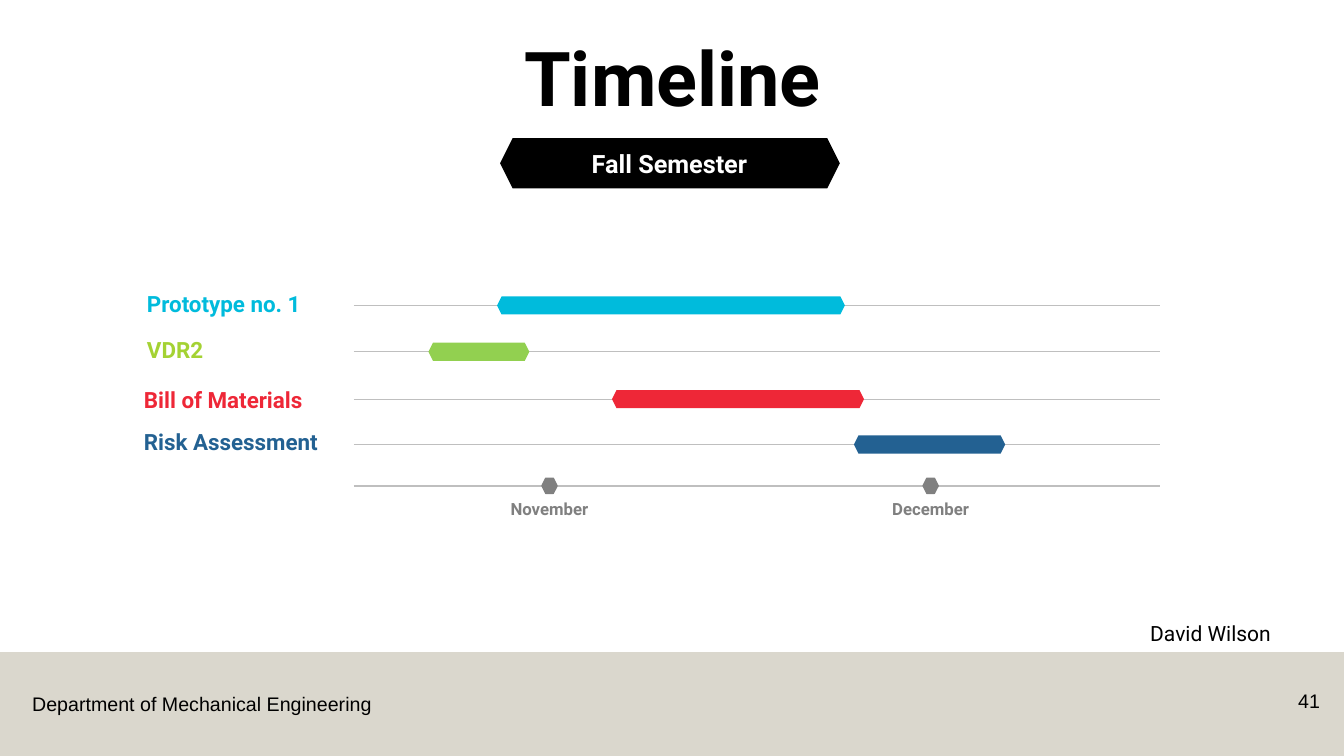
from lxml import etree
from pptx import Presentation
from pptx.dml.color import RGBColor
from pptx.enum import shapes, text
from pptx.oxml.ns import qn
from pptx.util import Inches, Pt

COLORS = {
    "black": "000000", "white": "FFFFFF", "band": "B7B09C",
    "rule": "BFBFBF", "gray": "808080", "cyan": "00BBDC",
    "lime": "A4D233", "green": "92D050", "red": "EE2737", "blue": "236192",
}
TASKS = [
    ("Prototype no. 1", "cyan", "cyan", 1.36, 2.83, 3.03, 4.93, 3.45),
    ("VDR2", "lime", "green", 1.36, 3.29, 3.49, 4.25, 1),
    ("Bill of Materials", "red", "red", 1.33, 3.78, 3.96, 6.07, 2.5),
    ("Risk Assessment", "blue", "blue", 1.33, 4.2, 4.41, 8.47, 1.5),
]
MONTHS = [("November", 5.45), ("December", 9.23)]
AXIS_Y, AXIS_LEFT, AXIS_RIGHT = 4.82, 3.51, 11.51
BAR_H, DOT, MONTH_W = 0.18, 0.15, 1.41
ALIGN = text.PP_ALIGN
SHAPE = shapes.MSO_SHAPE

prs = Presentation()
prs.slide_width, prs.slide_height = Inches(13.33), Inches(7.5)
s = prs.slides.add_slide(prs.slide_layouts[5])


def rgb(name):
    return RGBColor.from_string(COLORS[name])


def box(x, y, w, h):
    return [Inches(v) for v in (x, y, w, h)]


def write(tf, words, size=16, font="Roboto", color="black", bold=False,
          align=ALIGN.LEFT, wrap=True, spacing=None, anchor=text.MSO_ANCHOR.TOP):
    tf.word_wrap = wrap
    tf.vertical_anchor = anchor
    p = tf.paragraphs[0]
    p.alignment = align
    if spacing:
        p.line_spacing = spacing
    r = p.add_run()
    r.text = words
    r.font.size, r.font.name, r.font.bold = Pt(size), font, bold
    r.font.color.rgb = rgb(color)


def label(words, x, y, w, h, **fmt):
    write(s.shapes.add_textbox(*box(x, y, w, h)).text_frame, words, **fmt)


def add_shape(kind, x, y, w, h, color):
    sp = s.shapes.add_shape(kind, *box(x, y, w, h))
    sp.shadow.inherit = False
    sp.fill.solid()
    sp.fill.fore_color.rgb = rgb(color)
    sp.line.fill.background()
    return sp


def add_rule(y, width):
    ln = s.shapes.add_connector(shapes.MSO_CONNECTOR.STRAIGHT,
                                *box(AXIS_LEFT, y, AXIS_RIGHT, y))
    ln.line.color.rgb = rgb("rule")
    ln.line.width = Pt(width)
    etree.SubElement(ln._element.spPr, qn("a:effectLst"))


band = add_shape(SHAPE.RECTANGLE, 0, 6.47, 13.33, 1.03, "band")
clr = band._element.spPr.find(qn("a:solidFill"))[0]
etree.SubElement(clr, qn("a:alpha")).set("val", "50000")
label("Department of Mechanical Engineering", 0.22, 6.82, 3.59, 0.34,
      size=14, font="Arial", wrap=False)
label("41", 12.42, 6.79, 0.77, 0.4, size=14, font="Arial", align=ALIGN.RIGHT)

title = s.shapes.title
title.left, title.top, title.width, title.height = box(0.92, 0.44, 11.5, 0.74)
write(title.text_frame, "Timeline", size=54, bold=True, align=ALIGN.CENTER,
      spacing=0.9, anchor=text.MSO_ANCHOR.MIDDLE)
add_shape(SHAPE.HEXAGON, 4.96, 1.37, 3.37, 0.5, "black")
label("Fall Semester", 5.14, 1.42, 3, 0.4, size=18, color="white", bold=True,
      align=ALIGN.CENTER)

add_rule(AXIS_Y, 1)
for month, x in MONTHS:
    dot = add_shape(SHAPE.HEXAGON, x - DOT / 2, AXIS_Y - DOT / 2, DOT, DOT, "gray")
    dot.line.color.rgb = rgb("gray")
    dot.line.width = Pt(1)
    label(month, x - MONTH_W / 2, 4.9, MONTH_W, 0.3, size=12, color="gray",
          bold=True, align=ALIGN.CENTER)

for name, ink, fill, x, y, rule_y, start, length in TASKS:
    add_rule(rule_y, 0.5)
    label(name, x, y, 3, 0.37, color=ink, bold=True)
    add_shape(SHAPE.HEXAGON, start, rule_y - BAR_H / 2, length, BAR_H, fill)

label("David Wilson", 11.31, 6.11, 1.9, 0.35, size=15)

prs.save("out.pptx")
